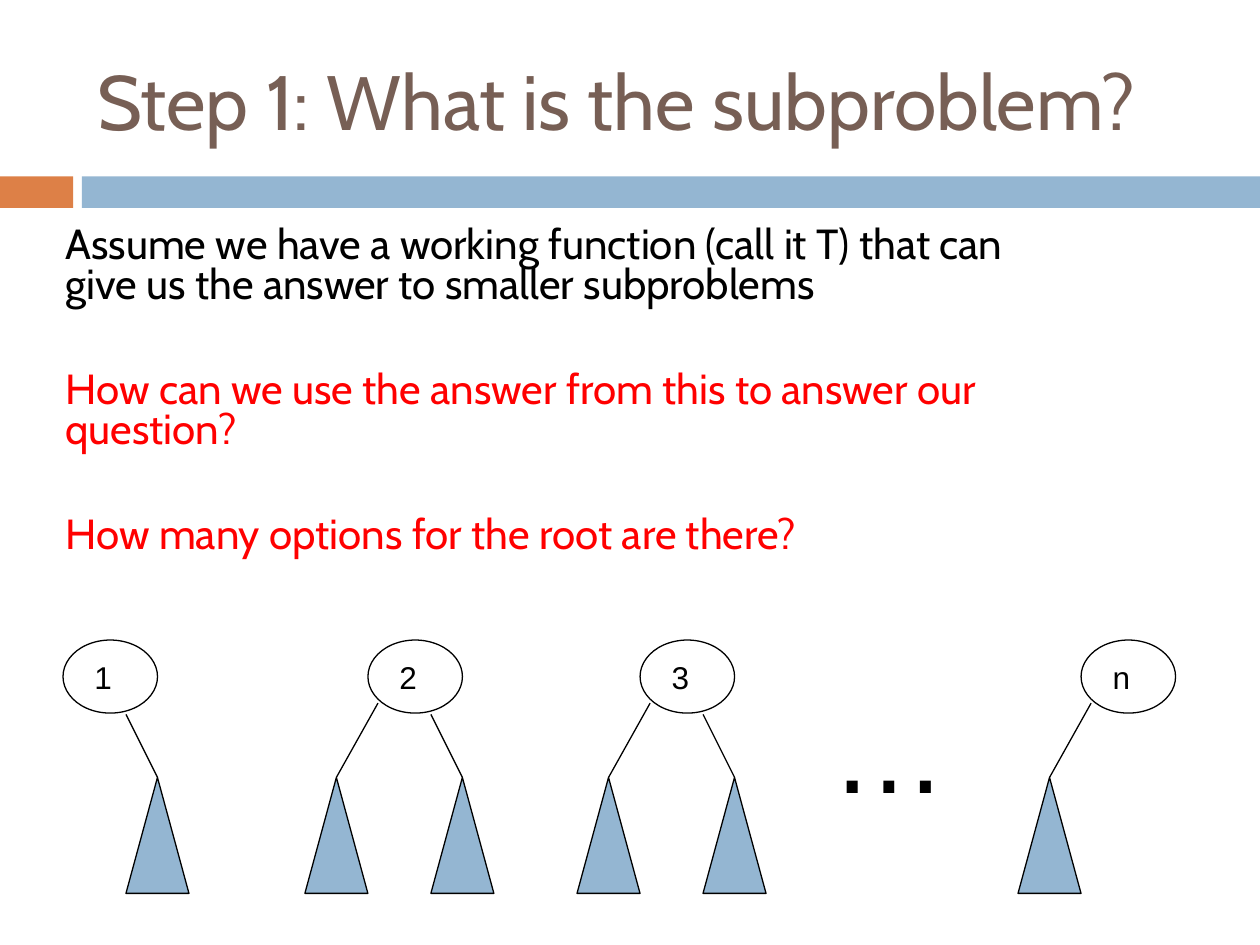
from dataclasses import dataclass

import pptx
import pptx.dml.color
import pptx.enum.shapes
import pptx.enum.text
import pptx.oxml.xmlchemy
import pptx.util
from pptx.util import Inches

SHAPES = pptx.enum.shapes.MSO_SHAPE
ANCHORS = pptx.enum.text.MSO_ANCHOR


@dataclass(frozen=True)
class Theme:
    text_font: str = "Cabin"
    label_font: str = "Arial"
    title_color: str = "775F55"
    accent: str = "DD8047"
    blue: str = "94B6D2"
    black: str = "000000"
    question: str = "FF0000"
    title_size: int = 44
    body_size: int = 24
    label_size: int = 18
    ellipsis_size: int = 66
    outline: float = 0.75


@dataclass(frozen=True)
class Box:
    left: float
    top: float
    width: float
    height: float

    def lengths(self) -> tuple:
        return tuple(Inches(v) for v in (self.left, self.top, self.width, self.height))


@dataclass(frozen=True)
class Tree:
    label: str
    left: float
    has_left_child: bool
    has_right_child: bool


@dataclass(frozen=True)
class Statement:
    text: str
    color: str
    space_before: int


THEME = Theme()
ROOT_TOP, ROOT_WIDTH, ROOT_HEIGHT = 5.08, 0.75, 0.58
CHILD_TOP, CHILD_WIDTH, CHILD_HEIGHT = 6.17, 0.5, 0.92

TREES = [
    Tree("1", 0.5, False, True),
    Tree("2", 2.92, True, True),
    Tree("3", 5.08, True, True),
    Tree("n", 8.58, True, False),
]
STATEMENTS = [
    Statement(
        "Assume we have a working function (call it T) that can give us "
        "the answer to smaller subproblems", THEME.black, 7),
    Statement("How can we use the answer from this to answer our question?",
              THEME.question, 37),
    Statement("How many options for the root are there?", THEME.question, 37),
]


def rgb(color: str) -> pptx.dml.color.RGBColor:
    return pptx.dml.color.RGBColor.from_string(color)


def add_run(paragraph, text: str, font: str, size: int, color: str) -> None:
    run = paragraph.add_run()
    run.text = text
    run.font.name = font
    run.font.size = pptx.util.Pt(size)
    run.font.color.rgb = rgb(color)


def place(shape, box: Box) -> None:
    shape.left, shape.top, shape.width, shape.height = box.lengths()


def prepare_frame(frame, anchor) -> None:
    frame.word_wrap = True
    frame.auto_size = pptx.enum.text.MSO_AUTO_SIZE.NONE
    frame.vertical_anchor = anchor


def add_figure(slide, kind, box: Box, fill: str | None, outlined: bool) -> None:
    shape = slide.shapes.add_shape(kind, *box.lengths())
    shape.shadow.inherit = False
    if fill:
        shape.fill.solid()
        shape.fill.fore_color.rgb = rgb(fill)
    else:
        shape.fill.background()
    if outlined:
        shape.line.color.rgb = rgb(THEME.black)
        shape.line.width = pptx.util.Pt(THEME.outline)
    else:
        shape.line.fill.background()


def add_label(slide, text: str, box: Box, size: int, margin_left: float) -> None:
    frame = slide.shapes.add_textbox(*box.lengths()).text_frame
    prepare_frame(frame, ANCHORS.TOP)
    frame.margin_left = Inches(margin_left)
    add_run(frame.paragraphs[0], text, THEME.label_font, size, THEME.black)


def add_branch(slide, start_x: float, start_y: float, apex_x: float) -> None:
    connector = slide.shapes.add_connector(
        pptx.enum.shapes.MSO_CONNECTOR.STRAIGHT,
        Inches(start_x), Inches(start_y), Inches(apex_x), Inches(CHILD_TOP))
    connector.line.color.rgb = rgb(THEME.black)
    connector.line.width = pptx.util.Pt(THEME.outline)
    connector._element.spPr.append(pptx.oxml.xmlchemy.OxmlElement("a:effectLst"))
    child = Box(apex_x - CHILD_WIDTH / 2, CHILD_TOP, CHILD_WIDTH, CHILD_HEIGHT)
    add_figure(slide, SHAPES.ISOSCELES_TRIANGLE, child, THEME.blue, True)


def add_tree(slide, tree: Tree) -> None:
    label_box = Box(tree.left + 0.08, 5.17, 0.67, 0.4)
    add_label(slide, tree.label, label_box, THEME.label_size, 0.17)
    root = Box(tree.left, ROOT_TOP, ROOT_WIDTH, ROOT_HEIGHT)
    add_figure(slide, SHAPES.OVAL, root, None, True)
    if tree.has_right_child:
        add_branch(slide, tree.left + 0.5, 5.67, tree.left + ROOT_WIDTH)
    if tree.has_left_child:
        add_branch(slide, tree.left + 0.08, 5.58, tree.left - 0.25)


def fill_title(title) -> None:
    place(title, Box(0.67, 0.25, 8.92, 1.08))
    prepare_frame(title.text_frame, ANCHORS.MIDDLE)
    paragraph = title.text_frame.paragraphs[0]
    paragraph.alignment = pptx.enum.text.PP_ALIGN.LEFT
    add_run(paragraph, "Step 1: What is the subproblem?",
            THEME.text_font, THEME.title_size, THEME.title_color)


def fill_body(body) -> None:
    place(body, Box(0.42, 1.75, 8.25, 2.67))
    frame = body.text_frame
    prepare_frame(frame, ANCHORS.TOP)
    for index, statement in enumerate(STATEMENTS):
        paragraph = frame.add_paragraph() if index else frame.paragraphs[0]
        paragraph.line_spacing = 0.8
        paragraph.space_before = pptx.util.Pt(statement.space_before)
        properties = paragraph._p.get_or_add_pPr()
        properties.set("marL", "0")
        properties.set("indent", "0")
        properties.append(pptx.oxml.xmlchemy.OxmlElement("a:buNone"))
        add_run(paragraph, statement.text, THEME.text_font,
                THEME.body_size, statement.color)


def main() -> None:
    presentation = pptx.Presentation()
    presentation.slide_width = Inches(10)
    presentation.slide_height = Inches(7.5)
    slide = presentation.slides.add_slide(presentation.slide_layouts[1])
    add_figure(slide, SHAPES.RECTANGLE, Box(0, 1.4, 0.58, 0.25), THEME.accent, False)
    add_figure(slide, SHAPES.RECTANGLE, Box(0.65, 1.4, 9.35, 0.25), THEME.blue, False)
    fill_title(slide.shapes.title)
    fill_body(slide.placeholders[1])
    for tree in TREES:
        add_tree(slide, tree)
    add_label(slide, "…", Box(6.5, 5.33, 1.08, 1.2), THEME.ellipsis_size, 0.1)
    presentation.save("out.pptx")


if __name__ == "__main__":
    main()
